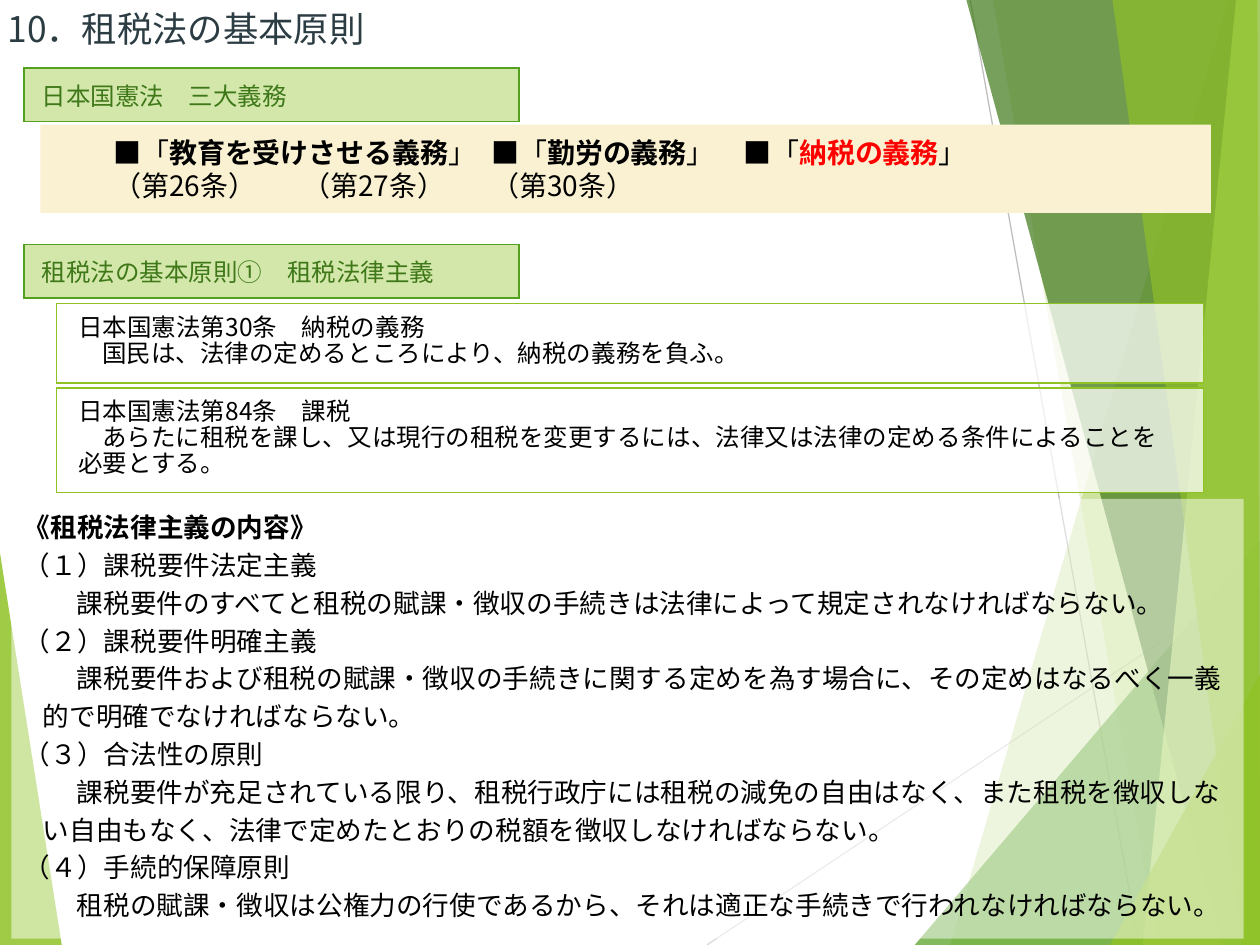
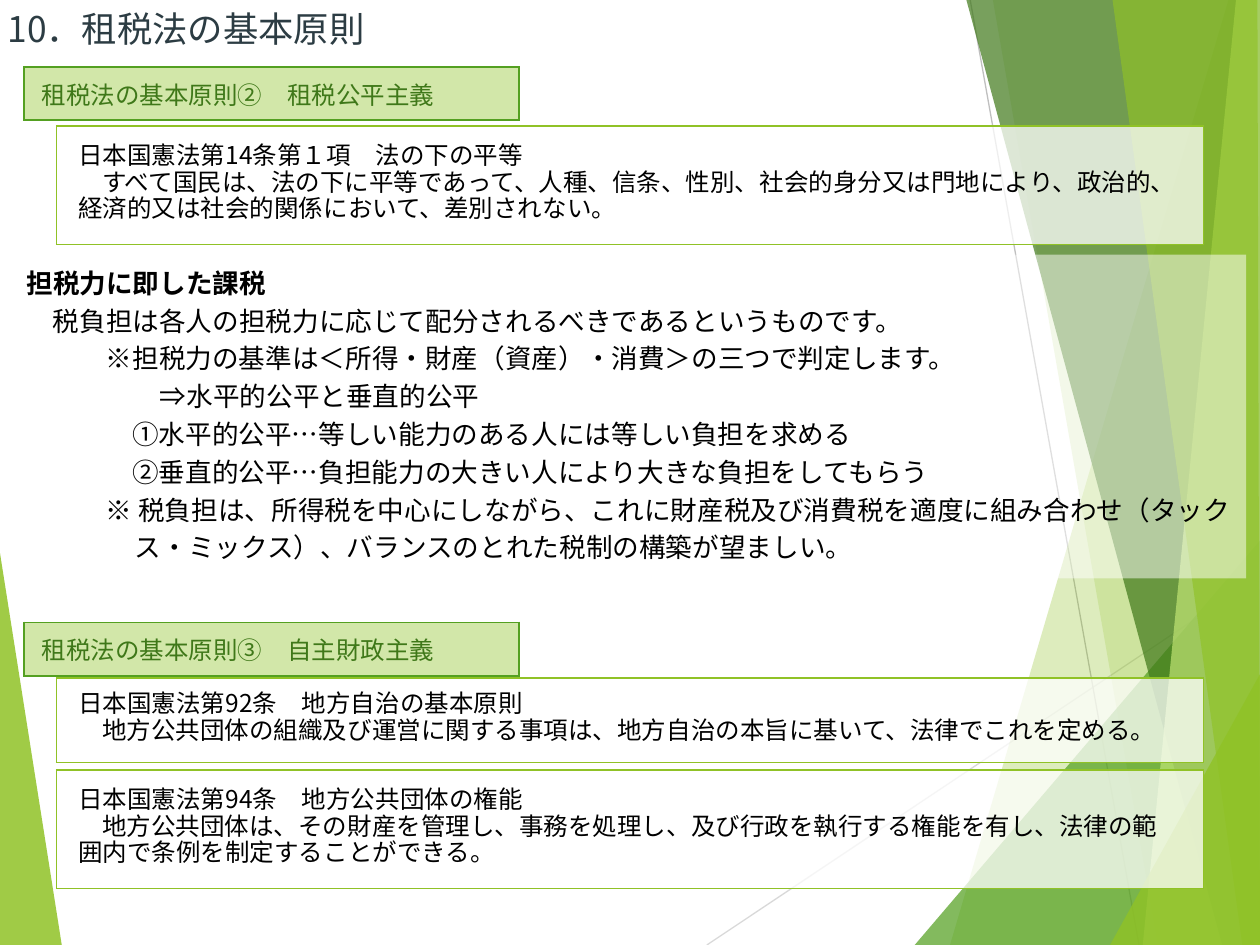
"""Build two slides on the basic principles of Japanese tax law."""
from dataclasses import dataclass

from lxml import etree
from pptx import Presentation
from pptx.dml.color import RGBColor
from pptx.enum.shapes import MSO_CONNECTOR, MSO_SHAPE
from pptx.enum.text import MSO_ANCHOR, MSO_AUTO_SIZE, PP_ALIGN
from pptx.oxml.ns import qn
from pptx.util import Inches, Pt

STRAIGHT, RECTANGLE = MSO_CONNECTOR.STRAIGHT, MSO_SHAPE.RECTANGLE
TOP, MIDDLE = MSO_ANCHOR.TOP, MSO_ANCHOR.MIDDLE
LEFT, NO_FIT = PP_ALIGN.LEFT, MSO_AUTO_SIZE.NONE

FONT = "Noto Sans CJK JP"
LIME, GREEN, FOREST, PALE = "90C226", "54A021", "3F7819", "C0E474"
BLACK, WHITE, RED, SLATE = "000000", "FFFFFF", "FF0000", "2C3C43"
HEADING_FILL, BAND_FILL = "D2E7A9", "FAF1D2"
TITLE = "10．租税法の基本原則"


@dataclass
class Facet:
    """A translucent polygon of the backdrop."""
    points: list[tuple[float, float]]
    color: str
    opacity: int


@dataclass
class Ray:
    """A thin line of the backdrop."""
    start: tuple[float, float]
    end: tuple[float, float]
    color: str


@dataclass
class Heading:
    """A green section heading."""
    top: float
    text: str


@dataclass
class Article:
    """A quoted article of the constitution."""
    top: float
    height: float
    name: str
    text: str


@dataclass
class Line:
    """A body paragraph with its left margin and first-line indent."""
    text: str
    left: float = 0
    first: float = 0
    bold: bool = False


@dataclass
class Panel:
    """The body text with its place."""
    left: float
    top: float
    height: float
    lines: list[Line]


@dataclass
class Duty:
    """A constitutional duty with the tab stops of its two lines."""
    name: str
    article: str
    name_tab: float
    article_tab: float
    color: str = BLACK


BACKDROP = [
    Facet([(0, 4.39), (0.49, 7.5), (0, 7.5)], LIME, 85),
    Ray((5.61, 7.5), (10, 4.57), "D9D9D9"),
    Ray((7.7, 0), (9.04, 7.5), "BFBFBF"),
    Facet([(9.75, 0), (7.54, 7.5), (10, 7.5), (10, 0)], LIME, 30),
    Facet([(7.88, 0), (9.19, 7.5), (10, 7.5), (10, 0)], LIME, 20),
    Facet([(7.26, 7.5), (10, 4.29), (10, 7.5)], GREEN, 72),
    Facet([(7.67, 0), (9.7, 7.5), (10, 7.5), (10, 0)], FOREST, 70),
    Facet([(9.81, 0), (9.07, 7.5), (10, 7.5), (10, 0)], PALE, 70),
    Facet([(8.83, 0), (9.86, 7.5), (10, 7.5), (9.98, 0)], LIME, 65),
    Facet([(8.81, 7.5), (10, 5.35), (10, 7.5)], LIME, 80),
]

DUTIES = [
    Duty("教育を受けさせる義務", "（第26条）", 0.7, 1.48),
    Duty("勤労の義務", "（第27条）", 4.24, 4.72),
    Duty("納税の義務", "（第30条）", 6.68, 7.08, RED),
]


def detail(text: str) -> Line:
    """Return an explanation whose first line is set in by two characters."""
    return Line(text, 0.15, 0.27)


LEGALITY = Panel(0.09, 3.96, 3.49, [
    Line("《租税法律主義の内容》", bold=True),
    Line("（１）課税要件法定主義"),
    detail("課税要件のすべてと租税の賦課・徴収の手続きは法律によって規定されなければならない。"),
    Line("（２）課税要件明確主義"),
    detail("課税要件および租税の賦課・徴収の手続きに関する定めを為す場合に、その定めはなるべく一義的で明確でなければならない。"),
    Line("（３）合法性の原則"),
    detail("課税要件が充足されている限り、租税行政庁には租税の減免の自由はなく、また租税を徴収しない自由もなく、法律で定めたとおりの税額を徴収しなければならない。"),
    Line("（４）手続的保障原則"),
    detail("租税の賦課・徴収は公権力の行使であるから、それは適正な手続きで行われなければならない。"),
])

FAIRNESS = Panel(0.11, 2.02, 2.57, [
    Line("担税力に即した課税", bold=True),
    Line("税負担は各人の担税力に応じて配分されるべきであるというものです。", 0.21),
    Line("※担税力の基準は＜所得・財産（資産）・消費＞の三つで判定します。", 0.63),
    Line("⇒水平的公平と垂直的公平", 1.06),
    Line("①水平的公平…等しい能力のある人には等しい負担を求める", 0.84),
    Line("②垂直的公平…負担能力の大きい人により大きな負担をしてもらう", 0.84),
    Line("※ 税負担は、所得税を中心にしながら、これに財産税及び消費税を適度に組み合わせ（タックス・ミックス）、バランスのとれた税制の構築が望ましい。", 0.86, -0.23),
])

LEGALITY_SECTIONS = [
    Heading(0.54, "日本国憲法　三大義務"),
    Heading(1.94, "租税法の基本原則①　租税法律主義"),
    Article(2.41, 0.63, "日本国憲法第30条　納税の義務",
            "国民は、法律の定めるところにより、納税の義務を負ふ。"),
    Article(3.08, 0.83, "日本国憲法第84条　課税",
            "あらたに租税を課し、又は現行の租税を変更するには、法律又は法律の定める条件によることを必要とする。"),
]

FAIRNESS_SECTIONS = [
    Heading(0.53, "租税法の基本原則②　租税公平主義"),
    Article(1, 0.94, "日本国憲法第14条第１項　法の下の平等",
            "すべて国民は、法の下に平等であって、人種、信条、性別、社会的身分又は門地により、政治的、経済的又は社会的関係において、差別されない。"),
    Heading(4.94, "租税法の基本原則③　自主財政主義"),
    Article(5.38, 0.67, "日本国憲法第92条　地方自治の基本原則",
            "地方公共団体の組織及び運営に関する事項は、地方自治の本旨に基いて、法律でこれを定める。"),
    Article(6.11, 0.94, "日本国憲法第94条　地方公共団体の権能",
            "地方公共団体は、その財産を管理し、事務を処理し、及び行政を執行する権能を有し、法律の範囲内で条例を制定することができる。"),
]


def rgb(color: str) -> RGBColor:
    """Turn a hex string into a colour."""
    return RGBColor.from_string(color)


def paint(fill, properties, color: str, opacity: int = 100) -> None:
    """Fill with a colour at an opacity in percent."""
    fill.solid()
    fill.fore_color.rgb = rgb(color)
    if opacity < 100:
        shade = properties.find(qn("a:solidFill"))[0]
        etree.SubElement(shade, qn("a:alpha"), val=str(opacity * 1000))


def add_text(para, text: str, *, size: float, color: str = BLACK, bold: bool = False) -> None:
    """Append a formatted span to a paragraph."""
    span = para.add_run()
    span.text = text
    span.font.name, span.font.size, span.font.bold = FONT, Pt(size), bold
    span.font.color.rgb = rgb(color)
    etree.SubElement(span.font._element, qn("a:ea"), typeface=FONT)


def next_para(frame, index: int, spacing=None, left: float = 0, first: float = 0):
    """Return the paragraph at an index, plain, left-aligned and indented."""
    para = frame.add_paragraph() if index else frame.paragraphs[0]
    para.alignment = LEFT
    para.space_before = para.space_after = Pt(0)
    if spacing:
        para.line_spacing = Pt(spacing)
    properties = para._p.get_or_add_pPr()
    properties.set("marL", str(Inches(left)))
    properties.set("indent", str(Inches(first)))
    etree.SubElement(properties, qn("a:buNone"))
    return para


def set_insets(target, side: float, edge: float) -> None:
    """Set the side and the top and bottom margins of a text frame or cell."""
    target.margin_left = target.margin_right = Inches(side)
    target.margin_top = target.margin_bottom = Inches(edge)


def place(box, left: float, top: float, width: float, height: float) -> None:
    """Move and size a placeholder."""
    box.left, box.top = Inches(left), Inches(top)
    box.width, box.height = Inches(width), Inches(height)


def draw_backdrop(page) -> None:
    """Draw the green facets and thin rays."""
    for part in BACKDROP:
        if isinstance(part, Ray):
            ray = page.shapes.add_connector(STRAIGHT, *map(Inches, part.start + part.end))
            ray.line.color.rgb, ray.line.width = rgb(part.color), Pt(0.75)
            etree.SubElement(ray.element.spPr, qn("a:effectLst"))
            continue
        first, *others = [(Inches(x), Inches(y)) for x, y in part.points]
        builder = page.shapes.build_freeform(*first)
        builder.add_line_segments(others)
        facet = builder.convert_to_shape()
        facet.shadow.inherit = False
        facet.line.fill.background()
        paint(facet.fill, facet.element.spPr, part.color, part.opacity)


def add_box_table(page, left: float, top: float, width: float, height: float,
                  fill: str, border: str, opacity: int = 100):
    """Add a bordered one-cell table and return its cell."""
    holder = page.shapes.add_table(1, 1, *map(Inches, (left, top, width, height)))
    holder.table.first_row = holder.table.horz_banding = False
    cell = holder.table.cell(0, 0)
    cell.vertical_anchor = TOP
    properties = next(holder.element.iter(qn("a:tcPr")))
    paint(cell.fill, properties, fill, opacity)
    for index, side in enumerate(("lnL", "lnR", "lnT", "lnB")):
        edge = etree.Element(qn(f"a:{side}"), w=str(Pt(1)))
        solid = etree.SubElement(edge, qn("a:solidFill"))
        etree.SubElement(solid, qn("a:srgbClr"), val=border)
        properties.insert(index, edge)
    return cell


def draw_heading(page, heading: Heading) -> None:
    """Draw a section heading."""
    cell = add_box_table(page, 0.19, heading.top, 3.93, 0.4, HEADING_FILL, GREEN)
    set_insets(cell, 0.14, 0.07)
    add_text(next_para(cell.text_frame, 0), heading.text, size=14, color=FOREST)


def draw_article(page, article: Article) -> None:
    """Draw an article with its name and text."""
    cell = add_box_table(page, 0.45, article.top, 9.1, article.height, WHITE, LIME, 75)
    set_insets(cell, 0.17, 0.06)
    cell.vertical_anchor = MIDDLE
    for index, text in enumerate((article.name, article.text)):
        para = next_para(cell.text_frame, index, 15, first=0.19 * index)
        add_text(para, text, size=14)


def add_tabs(para, stops: list[float]) -> None:
    """Give a paragraph left tab stops."""
    tabs = etree.SubElement(para._p.get_or_add_pPr(), qn("a:tabLst"))
    for stop in stops:
        etree.SubElement(tabs, qn("a:tab"), pos=str(Inches(stop)), algn="l")


def draw_duties(page) -> None:
    """Draw the band of the three duties."""
    band = page.shapes.add_shape(RECTANGLE, *map(Inches, (0.32, 0.99, 9.29, 0.7)))
    band.shadow.inherit = False
    band.line.fill.background()
    paint(band.fill, band.element.spPr, BAND_FILL)
    frame = band.text_frame
    frame.word_wrap, frame.vertical_anchor = True, MIDDLE
    set_insets(frame, 0.08, 0.01)
    names, articles = next_para(frame, 0), next_para(frame, 1)
    add_tabs(names, [duty.name_tab for duty in DUTIES])
    add_tabs(articles, [duty.article_tab for duty in DUTIES])
    for duty in DUTIES:
        add_text(names, "\t■「", size=16)
        add_text(names, duty.name, size=16, color=duty.color, bold=True)
        add_text(names, "」", size=16)
        add_text(articles, "\t" + duty.article, size=16)


def add_page(deck, panel: Panel, sections: list):
    """Add a slide with backdrop, title, body panel and sections."""
    page = deck.slides.add_slide(deck.slide_layouts[1])
    title, body = page.placeholders
    draw_backdrop(page)
    for box in (body, title):
        page.shapes.element.append(box.element)
        box.text_frame.word_wrap, box.text_frame.auto_size = True, NO_FIT
    place(title, 0, 0, 4, 0.45)
    set_insets(title.text_frame, 0.06, 0)
    title.text_frame.vertical_anchor = MIDDLE
    add_text(next_para(title.text_frame, 0), TITLE, size=20.2, color=SLATE)
    place(body, panel.left, panel.top, 9.78, panel.height)
    paint(body.fill, body.element.spPr, WHITE, 50)
    set_insets(body.text_frame, 0.1, 0.05)
    body.text_frame.vertical_anchor = TOP
    for index, line in enumerate(panel.lines):
        para = next_para(body.text_frame, index, 21.6, line.left, line.first)
        add_text(para, line.text, size=15.2, bold=line.bold)
    for section in sections:
        draw = draw_heading if isinstance(section, Heading) else draw_article
        draw(page, section)
    return page


def main() -> None:
    """Build and save the deck."""
    deck = Presentation()
    deck.slide_width, deck.slide_height = Inches(10), Inches(7.5)
    draw_duties(add_page(deck, LEGALITY, LEGALITY_SECTIONS))
    add_page(deck, FAIRNESS, FAIRNESS_SECTIONS)
    deck.save("out.pptx")


if __name__ == "__main__":
    main()
